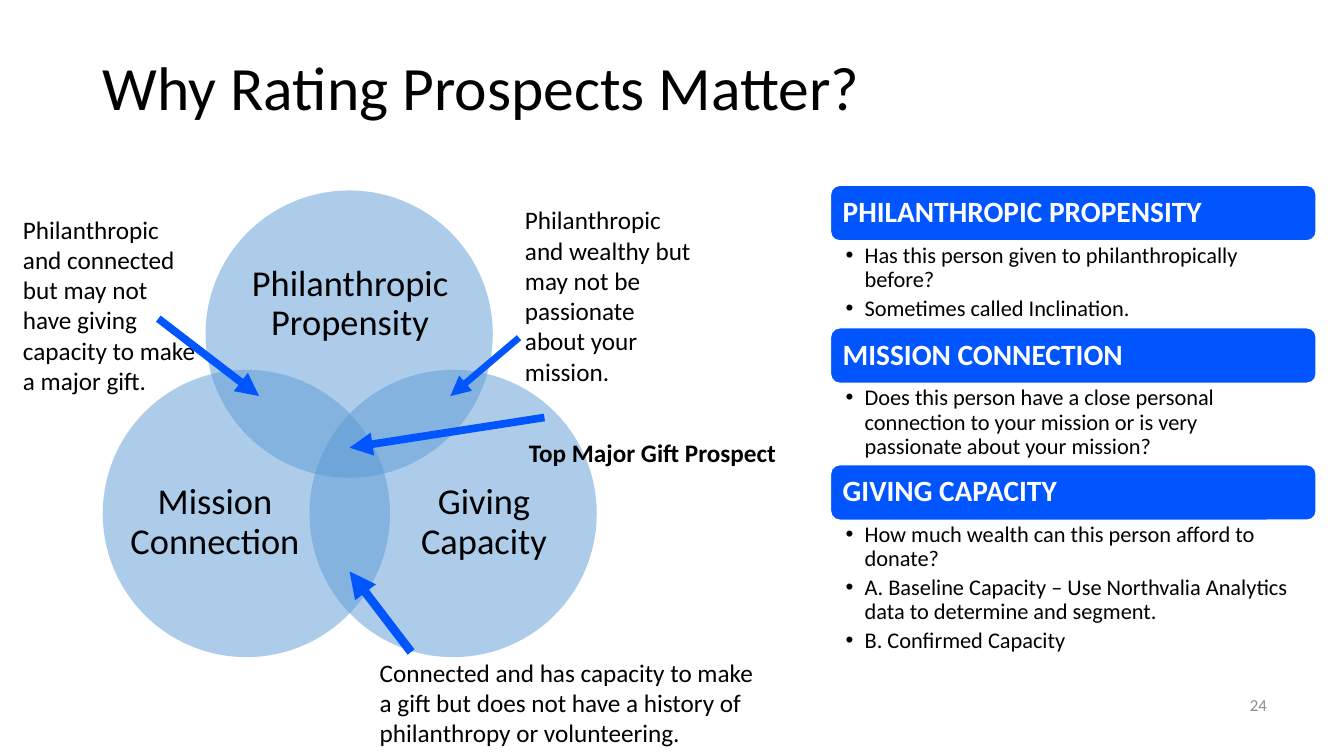
"""Build the slide on why rating prospects matters."""
from dataclasses import dataclass

from lxml import etree
from pptx import Presentation
from pptx.dml.color import RGBColor
from pptx.enum.shapes import MSO_CONNECTOR, MSO_SHAPE
from pptx.enum.text import MSO_ANCHOR, MSO_AUTO_SIZE, PP_ALIGN
from pptx.oxml.ns import qn
from pptx.util import Cm, Pt

LEFT, CENTER, RIGHT = PP_ALIGN.LEFT, PP_ALIGN.CENTER, PP_ALIGN.RIGHT
TOP, MIDDLE = MSO_ANCHOR.TOP, MSO_ANCHOR.MIDDLE
FIXED = MSO_AUTO_SIZE.NONE
ROUNDED, OVAL = MSO_SHAPE.ROUNDED_RECTANGLE, MSO_SHAPE.OVAL
STRAIGHT = MSO_CONNECTOR.STRAIGHT


@dataclass(frozen=True)
class Theme:
    font: str = "Calibri"
    black: RGBColor = RGBColor(0, 0, 0)
    white: RGBColor = RGBColor(255, 255, 255)
    gray: RGBColor = RGBColor(0x8C, 0x8C, 0x8C)
    accent: RGBColor = RGBColor(0x00, 0x55, 0xFF)
    circle: RGBColor = RGBColor(0x5B, 0x9B, 0xD5)
    title: int = 44
    label: int = 26
    heading: int = 21
    note: int = 18
    item: int = 16
    number: int = 12


theme = Theme()


def place(shape, box):
    for name, length in zip(("left", "top", "width", "height"), box):
        setattr(shape, name, Cm(length))


def write(shape, lines, size, color=theme.black, bold=False, align=LEFT, anchor=TOP,
          spacing=1.0, insets=(0.25, 0.13, 0.25, 0.13), after=0, bullet=False):
    frame = shape.text_frame
    frame_format = {"word_wrap": True, "auto_size": FIXED, "vertical_anchor": anchor}
    for side, inset in zip(("left", "top", "right", "bottom"), insets):
        frame_format["margin_" + side] = Cm(inset)
    for name, value in frame_format.items():
        setattr(frame, name, value)
    paragraph_format = {"alignment": align, "line_spacing": spacing,
                        "space_before": Pt(0), "space_after": Pt(after)}
    font_format = {"name": theme.font, "size": Pt(size), "bold": bold}
    for index, line in enumerate(lines):
        paragraph = frame.add_paragraph() if index else frame.paragraphs[0]
        if bullet:
            properties = paragraph._p.get_or_add_pPr()
            properties.set("marL", str(Cm(0.48)))
            properties.set("indent", str(-Cm(0.48)))
            etree.SubElement(properties, qn("a:buFont"), typeface="Arial")
            etree.SubElement(properties, qn("a:buChar"), char="•")
        for name, value in paragraph_format.items():
            setattr(paragraph, name, value)
        run = paragraph.add_run()
        run.text = line
        for name, value in font_format.items():
            setattr(run.font, name, value)
        run.font.color.rgb = color


presentation = Presentation()
presentation.slide_width = Cm(33.87)
presentation.slide_height = Cm(19.05)
slide = presentation.slides.add_slide(presentation.slide_layouts.get_by_name("Comparison"))
shapes = slide.shapes

place(shapes.title, (2.34, 1.09, 30.45, 2.36))
write(shapes.title, ["Why Rating Prospects Matter?"], theme.title, anchor=MIDDLE, spacing=0.9)

number = shapes.add_textbox(Cm(24.56), Cm(17.25), Cm(7.62), Cm(1.02))
write(number, ["24"], theme.number, theme.gray, align=RIGHT, anchor=MIDDLE)

criteria = [
    (4.67, 2.18, "PHILANTHROPIC PROPENSITY",
     ["Has this person given to philanthropically before?",
      "Sometimes called Inclination."]),
    (8.26, 2.06, "MISSION CONNECTION",
     ["Does this person have a close personal connection to your mission "
      "or is very passionate about your mission?"]),
    (11.71, 3.56, "GIVING CAPACITY",
     ["How much wealth can this person afford to donate?",
      "A. Baseline Capacity – Use Northvalia Analytics data to determine and segment.",
      "B. Confirmed Capacity"]),
]
column_left, column_width, bar_height = 20.93, 12.24, 1.4
*bodies, spare = list(slide.placeholders)[1:]
spare.element.getparent().remove(spare.element)
for body, (top, height, heading, items) in zip(bodies, criteria):
    bar = shapes.add_shape(ROUNDED, Cm(column_left), Cm(top), Cm(column_width), Cm(bar_height))
    bar.shadow.inherit = False
    bar.fill.solid()
    bar.fill.fore_color.rgb = theme.accent
    bar.line.color.rgb = theme.white
    bar.line.width = Pt(1)
    write(bar, [heading], theme.heading, theme.white, bold=True, anchor=MIDDLE,
          spacing=0.9, insets=(0.24, 0.23, 0.24, 0.23))
    place(body, (column_left, top + bar_height, column_width, height))
    write(body, items, theme.item, spacing=0.9, insets=(0.38, 0.08, 0.41, 0.08),
          after=3.2, bullet=True)

diameter = 7.24
circles = [
    (5.18, 4.8, "Philanthropic Propensity", (6.17, 6.05, 5.31, 3.25)),
    (7.8, 9.32, "Giving Capacity", (10.03, 11.18, 4.34, 3.99)),
    (2.59, 9.32, "Mission Connection", (3.25, 11.18, 4.34, 3.99)),
]
for left, top, text, box in circles:
    circle = shapes.add_shape(OVAL, Cm(left), Cm(top), Cm(diameter), Cm(diameter))
    circle.shadow.inherit = False
    circle.fill.solid()
    circle.fill.fore_color.rgb = theme.circle
    circle.line.fill.background()
    color = circle.element.spPr.find(qn("a:solidFill")).find(qn("a:srgbClr"))
    etree.SubElement(color, qn("a:alpha"), val="50000")
    label = shapes.add_textbox(*map(Cm, box))
    write(label, [text], theme.label, align=CENTER, anchor=MIDDLE, spacing=0.9,
          insets=(0, 0, 0, 0))

notes = [
    ((0.33, 5.26, 4.88, 4.88), False,
     "Philanthropic and connected but may not have giving capacity to make a major gift."),
    ((12.98, 5.03, 4.88, 4.88), False,
     "Philanthropic and wealthy but may not be passionate about your mission."),
    ((9.32, 16.43, 10.29, 2.57), False,
     "Connected and has capacity to make a gift but does not have a history of "
     "philanthropy or volunteering."),
    ((13.08, 10.9, 6.88, 1.02), True, "Top Major Gift Prospect"),
]
for box, bold, text in notes:
    write(shapes.add_textbox(*map(Cm, box)), [text], theme.note, bold=bold)

arrows = [
    ((13.08, 8.51, 11.35, 9.98), 4.75),
    ((3.99, 8.03, 6.53, 9.98), 5.5),
    ((10.36, 16.43, 8.81, 14.4), 6.25),
    ((13.72, 10.52, 8.81, 11.28), 5.5),
]
for ends, width in arrows:
    arrow = shapes.add_connector(STRAIGHT, *map(Cm, ends))
    arrow.line.color.rgb = theme.accent
    arrow.line.width = Pt(width)
    etree.SubElement(arrow.line._get_or_add_ln(), qn("a:tailEnd"), type="triangle")
    etree.SubElement(arrow._element.spPr, qn("a:effectLst"))

presentation.save("out.pptx")
